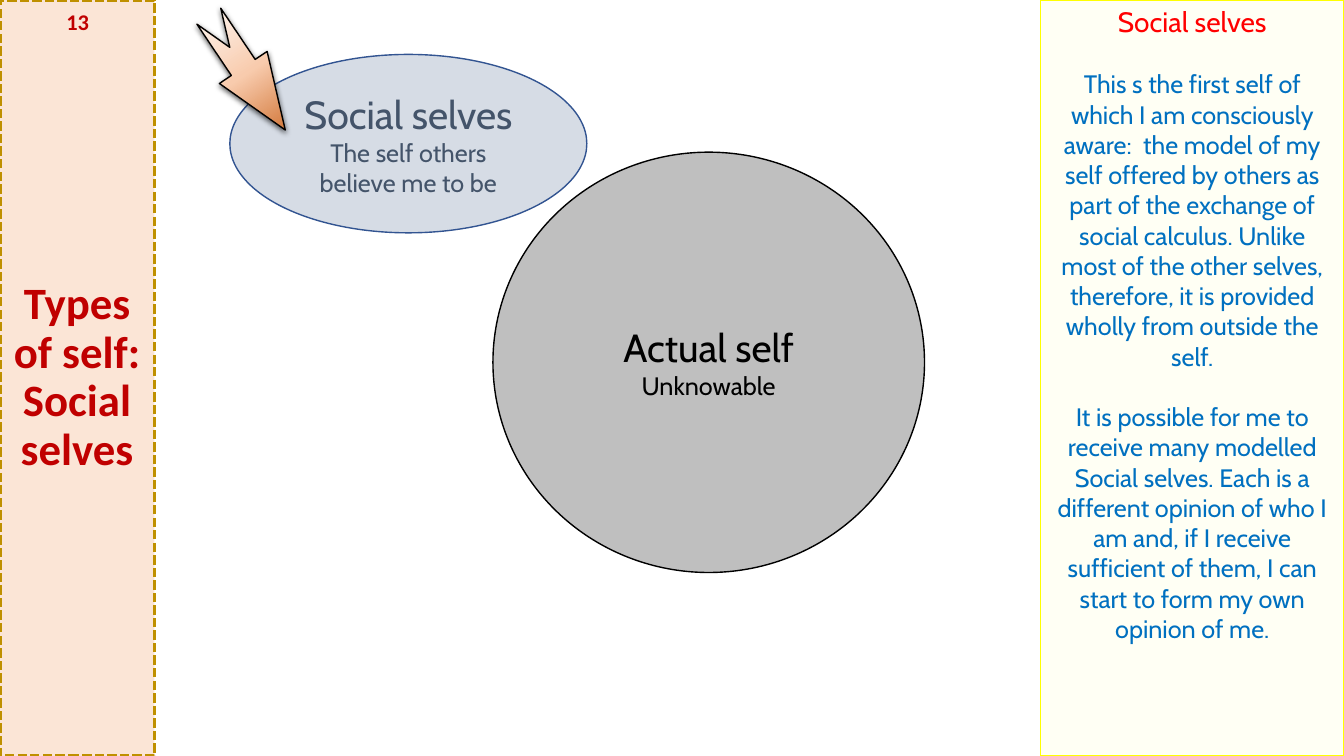
"""Builds the slide on types of self: social selves."""
from lxml import etree
from pptx import Presentation
from pptx.dml.color import RGBColor
from pptx.enum.dml import MSO_LINE
from pptx.enum.shapes import MSO_SHAPE
from pptx.enum.text import MSO_ANCHOR, MSO_AUTO_SIZE, PP_ALIGN
from pptx.oxml.ns import qn
from pptx.util import Inches, Pt

RECTANGLE, OVAL = MSO_SHAPE.RECTANGLE, MSO_SHAPE.OVAL
NOTCHED_ARROW = MSO_SHAPE.NOTCHED_RIGHT_ARROW
DASHED = MSO_LINE.SQUARE_DOT
TOP, MIDDLE = MSO_ANCHOR.TOP, MSO_ANCHOR.MIDDLE
CENTER = PP_ALIGN.CENTER
FIXED = MSO_AUTO_SIZE.NONE
TITLE_ONLY = 5

COLORS = {
    "black": "000000", "grey": "BFBFBF", "red": "FF0000", "crimson": "C00000",
    "blush": "FBE5D6", "gold": "BF9000", "mist": "D6DCE5", "navy": "325491",
    "slate": "44546A", "cream": "FFFF99", "yellow": "FFFF00", "blue": "0070C0",
    "rust": "C55A11", "peach": "F8CBAD", "white": "FFFFFF",
}


class SlideBuilder:
    """Holds the style and the current slide; places are percentages of its size."""

    heading_font = "Calibri"
    body_font = "Cabin"
    blank_line = 21.6

    def __init__(self, deck):
        self.deck = deck
        self.page = deck.slides.add_slide(deck.slide_layouts[TITLE_ONLY])

    def place(self, left, top, width, height):
        across, down = self.deck.slide_width / 100, self.deck.slide_height / 100
        return [round(length) for length in
                (left * across, top * down, width * across, height * down)]

    def color(self, name):
        return RGBColor.from_string(COLORS[name])

    def paint(self, box, fill, line, width=1):
        box.fill.solid()
        box.fill.fore_color.rgb = self.color(fill)
        box.line.color.rgb = self.color(line)
        box.line.width = Pt(width)

    def style(self, para, size, color, font, bold=False):
        para.alignment = CENTER
        para.font.size, para.font.name, para.font.bold = Pt(size), font, bold
        para.font.color.rgb = self.color(color)

    def title(self, lines, place):
        box = self.page.shapes.title
        box.left, box.top, box.width, box.height = self.place(*place)
        self.paint(box, "blush", "gold", 2.25)
        box.line.dash_style = DASHED
        frame = box.text_frame
        frame.word_wrap, frame.auto_size = True, FIXED
        frame.vertical_anchor = MIDDLE
        para = frame.paragraphs[0]
        self.style(para, 32, "crimson", self.heading_font, True)
        para.line_spacing = 0.9
        para.add_run().text = lines[0]
        for line in lines[1:]:
            para.add_line_break()
            para.add_run().text = line

    def shape(self, kind, place, fill, line, texts=(), anchor=MIDDLE):
        box = self.page.shapes.add_shape(kind, *self.place(*place))
        box.shadow.inherit = False
        self.paint(box, fill, line)
        frame = box.text_frame
        frame.word_wrap, frame.vertical_anchor = True, anchor
        for index, (text, size, color, gap) in enumerate(texts):
            para = frame.add_paragraph() if index else frame.paragraphs[0]
            para.text = text
            para.space_before = Pt(gap)
            self.style(para, size, color, self.body_font)
        return box

    def label(self, text, place):
        box = self.page.shapes.add_textbox(*self.place(*place))
        box.text_frame.word_wrap = True
        para = box.text_frame.paragraphs[0]
        para.text = text
        self.style(para, 16, "crimson", self.heading_font, True)

    def fade(self, box, percent):
        tint = box.fill._xPr.find(qn("a:solidFill"))[0]
        etree.SubElement(tint, qn("a:alpha"), val=str(percent * 1000))

    def arrow(self, place, rotation, stops):
        box = self.shape(NOTCHED_ARROW, place, "peach", "black")
        box.rotation = rotation
        box.adjustments[0], box.adjustments[1] = 0.5, 1.31
        box.fill.gradient()
        box.fill.gradient_angle = 180
        properties = box.fill._xPr
        stop_list = properties.find(qn("a:gradFill")).find(qn("a:gsLst"))
        for stop in list(stop_list):
            stop_list.remove(stop)
        for percent, name in stops:
            stop = etree.SubElement(stop_list, qn("a:gs"), pos=str(percent * 1000))
            etree.SubElement(stop, qn("a:srgbClr"), val=COLORS[name])
        shadow = etree.SubElement(
            properties.find(qn("a:effectLst")), qn("a:outerShdw"),
            blurRad=str(Pt(4)), dist=str(Pt(1.5)), dir="5400000", rotWithShape="0")
        tint = etree.SubElement(shadow, qn("a:srgbClr"), val=COLORS["black"])
        etree.SubElement(tint, qn("a:alpha"), val="63000")


def main():
    deck = Presentation()
    deck.slide_width, deck.slide_height = Inches(13.33), Inches(7.5)
    slide = SlideBuilder(deck)
    gap = slide.blank_line

    slide.title(["Types of self:", "Social selves"], (0, 0, 11.48, 100))
    slide.shape(OVAL, (36.68, 20.13, 32.11, 55.6), "grey", "black", [
        ("Actual self", 28, "black", 0),
        ("Unknowable", 18, "black", 0)])
    slide.shape(OVAL, (17.1, 7.2, 26.56, 23.6), "mist", "navy", [
        ("Social selves", 28, "slate", 0),
        ("The self others believe me to be", 18, "slate", 0)])
    slide.arrow((13.28, 5.87, 10.2, 7.6), 56.1,
                [(0, "rust"), (50, "peach"), (100, "white")])
    panel = slide.shape(RECTANGLE, (77.42, 0, 22.58, 100), "cream", "yellow", [
        ("Social selves", 20, "red", 0),
        ("This s the first self of which I am consciously aware:  the model of "
         "my self offered by others as part of the exchange of social calculus. "
         "Unlike most of the other selves, therefore, it is provided wholly from "
         "outside the self.", 18, "blue", gap),
        ("It is possible for me to receive many modelled Social selves. Each is "
         "a different opinion of who I am and, if I receive sufficient of them, "
         "I can start to form my own opinion of me.", 18, "blue", gap)], TOP)
    slide.fade(panel, 10)
    slide.label("13", (3.3, 0.4, 4.95, 4.93))

    deck.save("out.pptx")


if __name__ == "__main__":
    main()
